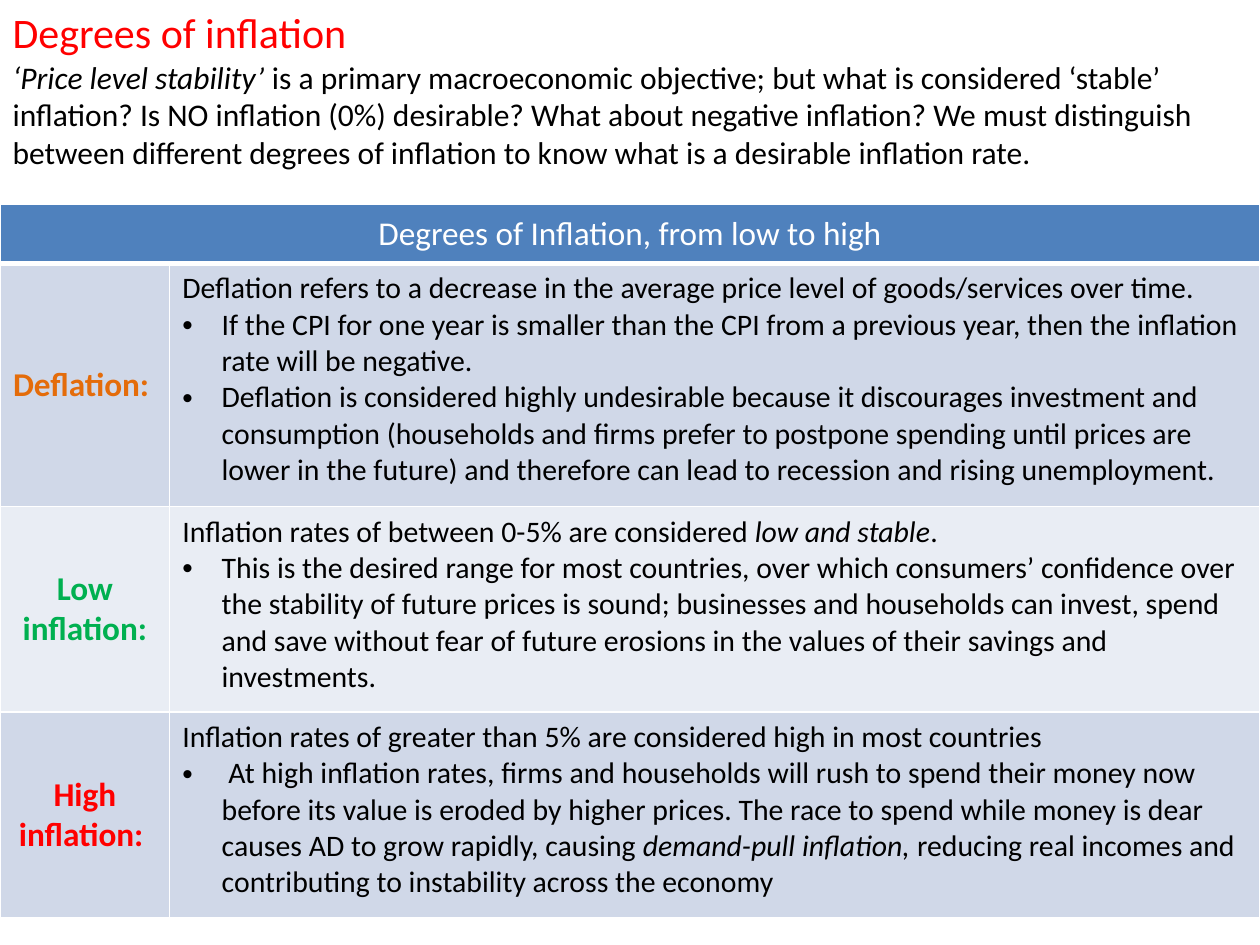
from lxml.etree import SubElement
from pptx import Presentation
from pptx.dml.color import RGBColor
from pptx.enum.text import MSO_ANCHOR, MSO_AUTO_SIZE, PP_ALIGN
from pptx.oxml.ns import qn
from pptx.util import Pt

COLORS = {
    "black": "000000", "white": "FFFFFF", "red": "FF0000",
    "orange": "E46C0A", "green": "00B050", "header": "4F81BD",
    "band_dark": "D0D8E8", "band_light": "E9EDF4",
}
FONT = "Calibri"
BULLET_INDENT = Pt(22.5)

INTRO = [
    ("‘Price level stability’ ", True),
    ("is a primary macroeconomic objective; but what is considered ‘stable’ inflation? "
     "Is NO inflation (0%) desirable? What about negative inflation? We must distinguish "
     "between different degrees of inflation to know what is a desirable inflation rate.", False),
]
DEGREES = [
    ("Deflation: ", "orange", "band_dark", 139, [
        [("Deflation refers to a decrease in the average price level of goods/services over time.", False)],
        [("If the CPI for one year is smaller than the CPI from a previous year, "
          "then the inflation rate will be negative.", False)],
        [("Deflation is considered highly undesirable because it discourages investment and "
          "consumption (households and firms prefer to postpone spending until prices are lower "
          "in the future) and therefore can lead to recession and rising unemployment.", False)],
    ]),
    ("Low inflation:", "green", "band_light", 117.4, [
        [("Inflation rates of between 0-5% are considered ", False), ("low and stable", True), (".", False)],
        [("This is the desired range for most countries, over which consumers’ confidence over "
          "the stability of future prices is sound; businesses and households can invest, spend "
          "and save without fear of future erosions in the values of their savings and investments.", False)],
    ]),
    ("High inflation: ", "red", "band_dark", 117.4, [
        [("Inflation rates of greater than 5% are considered high in most countries", False)],
        [(" At high inflation rates, firms and households will rush to spend their money now before "
          "its value is eroded by higher prices. The race to spend while money is dear causes AD "
          "to grow rapidly, causing ", False), ("demand-pull inflation, ", True),
         ("reducing real incomes and contributing to instability across the economy", False)],
    ]),
]


def add_run(paragraph, text, size, color, bold=False, italic=False):
    run = paragraph.add_run()
    run.text = text
    run.font.name = FONT
    run.font.size = Pt(size)
    run.font.bold = bold
    run.font.italic = italic
    run.font.color.rgb = RGBColor.from_string(COLORS[color])


def set_bullet(paragraph, bulleted):
    properties = paragraph._p.get_or_add_pPr()
    indent = BULLET_INDENT if bulleted else 0
    properties.set("marL", str(indent))
    properties.set("indent", str(-indent))
    if bulleted:
        SubElement(properties, qn("a:buFont"), typeface="Arial")
        SubElement(properties, qn("a:buChar"), char="•")
    else:
        SubElement(properties, qn("a:buNone"))


def place_text(placeholder, left, top, width, height):
    placeholder.left, placeholder.top = Pt(left), Pt(top)
    placeholder.width, placeholder.height = Pt(width), Pt(height)
    frame = placeholder.text_frame
    frame.word_wrap = True
    frame.auto_size = MSO_AUTO_SIZE.NONE
    frame.vertical_anchor = MSO_ANCHOR.TOP
    paragraph = frame.paragraphs[0]
    paragraph.alignment = PP_ALIGN.LEFT
    paragraph.space_before = Pt(0)
    return paragraph


def add_heading(slide, left, top, width, height):
    title_height = 29.3
    heading = place_text(slide.shapes.title, left, top, width, title_height)
    add_run(heading, "Degrees of inflation", 24, "red")
    intro = place_text(slide.placeholders[1], left, top + title_height, width, height - title_height)
    set_bullet(intro, False)
    for text, italic in INTRO:
        add_run(intro, text, 18, "black", italic=italic)


def format_cell(cell, fill, bottom_width=1):
    properties = cell._tc.get_or_add_tcPr()
    for side, width in (("L", 1), ("R", 1), ("T", 1), ("B", bottom_width)):
        line = SubElement(properties, qn(f"a:ln{side}"), w=str(Pt(width)))
        SubElement(SubElement(line, qn("a:solidFill")), qn("a:srgbClr"), val=COLORS["white"])
    cell.fill.solid()
    cell.fill.fore_color.rgb = RGBColor.from_string(COLORS[fill])
    cell.margin_left = cell.margin_right = Pt(7.2)
    cell.margin_top = cell.margin_bottom = Pt(4)


def fill_label(cell, text, color, bold):
    cell.vertical_anchor = MSO_ANCHOR.MIDDLE
    label = cell.text_frame.paragraphs[0]
    label.alignment = PP_ALIGN.CENTER
    add_run(label, text, 19, color, bold=bold)


def fill_description(cell, points):
    frame = cell.text_frame
    for index, runs in enumerate(points):
        paragraph = frame.add_paragraph() if index else frame.paragraphs[0]
        set_bullet(paragraph, index > 0)
        for text, italic in runs:
            add_run(paragraph, text, 17, "black", italic=italic)


def add_degrees_table(slide, left, top, width, height):
    label_width = 97
    table = slide.shapes.add_table(
        len(DEGREES) + 1, 2, Pt(left), Pt(top), Pt(width), Pt(height)).table
    table.columns[0].width = Pt(label_width)
    table.columns[1].width = Pt(width - label_width)
    table.rows[0].height = Pt(height - sum(degree[3] for degree in DEGREES))

    for cell in table.rows[0].cells:
        format_cell(cell, "header", 3)
    header = table.cell(0, 0)
    header.merge(table.cell(0, 1))
    fill_label(header, "Degrees of Inflation, from low to high", "white", False)

    for row, (label, color, band, row_height, points) in enumerate(DEGREES, 1):
        table.rows[row].height = Pt(row_height)
        for cell in table.rows[row].cells:
            format_cell(cell, band)
        fill_label(table.cell(row, 0), label, color, True)
        fill_description(table.cell(row, 1), points)


def main():
    presentation = Presentation()
    presentation.slide_width, presentation.slide_height = Pt(720), Pt(540)
    slide = presentation.slides.add_slide(presentation.slide_layouts[1])
    add_heading(slide, 0, 0, 720, 101.5)
    add_degrees_table(slide, 0, 116.6, 720, 407.8)
    presentation.save("out.pptx")


if __name__ == "__main__":
    main()
